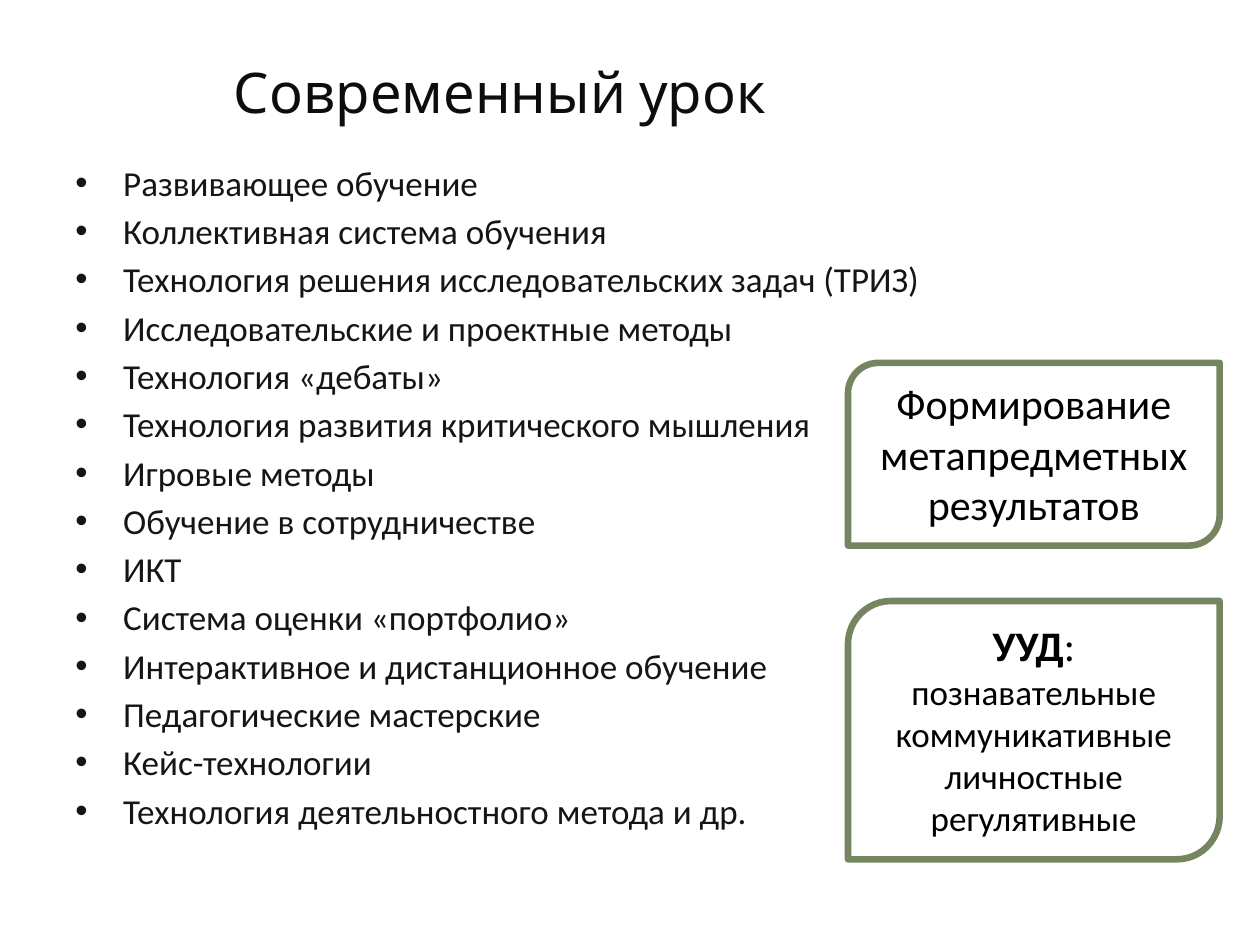
from dataclasses import dataclass

from lxml.etree import SubElement
from pptx import Presentation
from pptx.dml.color import RGBColor
from pptx.enum.shapes import MSO_SHAPE as Shape
from pptx.enum.text import MSO_ANCHOR as Anchor, PP_ALIGN as Align
from pptx.oxml.ns import qn
from pptx.slide import Slide
from pptx.util import Inches, Pt

COLORS = {
    "title": "0D0D0D",
    "body": "161514",
    "card_text": "000000",
    "card_fill": "FFFFFF",
    "card_line": "748560",
}
METHODS = [
    "Развивающее обучение",
    "Коллективная система обучения",
    "Технология решения исследовательских задач (ТРИЗ)",
    "Исследовательские и проектные методы",
    "Технология «дебаты»",
    "Технология развития критического мышления",
    "Игровые методы",
    "Обучение в сотрудничестве",
    "ИКТ",
    "Система оценки «портфолио»",
    "Интерактивное и дистанционное обучение",
    "Педагогические мастерские",
    "Кейс-технологии",
    "Технология деятельностного метода и др.",
]


@dataclass
class Line:
    text: str
    size: int
    bold_lead: str = ""


@dataclass
class Card:
    top: float
    height: float
    lines: list[Line]


CARDS = [
    Card(2.88, 1.45, [Line("Формирование метапредметных результатов", 24)]),
    Card(4.77, 2.05, [
        Line(":", 24, "УУД"),
        Line("познавательные", 20),
        Line("коммуникативные", 20),
        Line("личностные", 20),
        Line("регулятивные", 20),
    ]),
]


def rgb(name: str) -> RGBColor:
    return RGBColor.from_string(COLORS[name])


def style(item, size: int, color: str, name: str = "Calibri") -> None:
    item.font.name = name
    item.font.size = Pt(size)
    item.font.color.rgb = rgb(color)


def add_title(s: Slide, text: str) -> None:
    sp = s.shapes.add_textbox(Inches(0.5), Inches(0.3), Inches(6.94), Inches(0.85))
    tf = sp.text_frame
    tf.word_wrap = True
    tf.vertical_anchor = Anchor.MIDDLE
    tf.text = text
    p = tf.paragraphs[0]
    p.alignment = Align.CENTER
    style(p.runs[0], 32, "title", "Karla")


def add_bullets(s: Slide, items: list[str]) -> None:
    sp = s.shapes.add_textbox(Inches(0.5), Inches(1.23), Inches(9), Inches(5.83))
    tf = sp.text_frame
    tf.word_wrap = True
    tf.text = "\n".join(items)
    for i, p in enumerate(tf.paragraphs):
        pPr = p._p.get_or_add_pPr()
        pPr.set("marL", str(Inches(0.38)))
        pPr.set("indent", str(-Inches(0.38)))
        SubElement(pPr, qn("a:buFont")).set("typeface", "Arial")
        SubElement(pPr, qn("a:buChar")).set("char", "•")
        if i:
            p.space_before = Pt(3.6)
        style(p.runs[0], 20, "body")


def add_card(s: Slide, card: Card) -> None:
    sp = s.shapes.add_shape(Shape.ROUND_2_DIAG_RECTANGLE, Inches(6.73),
                            Inches(card.top), Inches(2.95), Inches(card.height))
    sp.shadow.inherit = False
    sp.fill.solid()
    sp.fill.fore_color.rgb = rgb("card_fill")
    sp.line.color.rgb = rgb("card_line")
    sp.line.width = Pt(3.78)
    tf = sp.text_frame
    tf.word_wrap = True
    tf.vertical_anchor = Anchor.TOP
    for i, line in enumerate(card.lines):
        p = tf.add_paragraph() if i else tf.paragraphs[0]
        p.alignment = Align.CENTER
        for text, bold in ((line.bold_lead, True), (line.text, False)):
            if text:
                r = p.add_run()
                r.text = text
                r.font.bold = bold
                style(r, line.size, "card_text")


def main() -> None:
    prs = Presentation()
    prs.slide_width, prs.slide_height = Inches(10), Inches(7.5)
    s = prs.slides.add_slide(prs.slide_layouts[6])
    add_title(s, "Современный урок")
    add_bullets(s, METHODS)
    for card in CARDS:
        add_card(s, card)
    prs.save("out.pptx")


if __name__ == "__main__":
    main()
